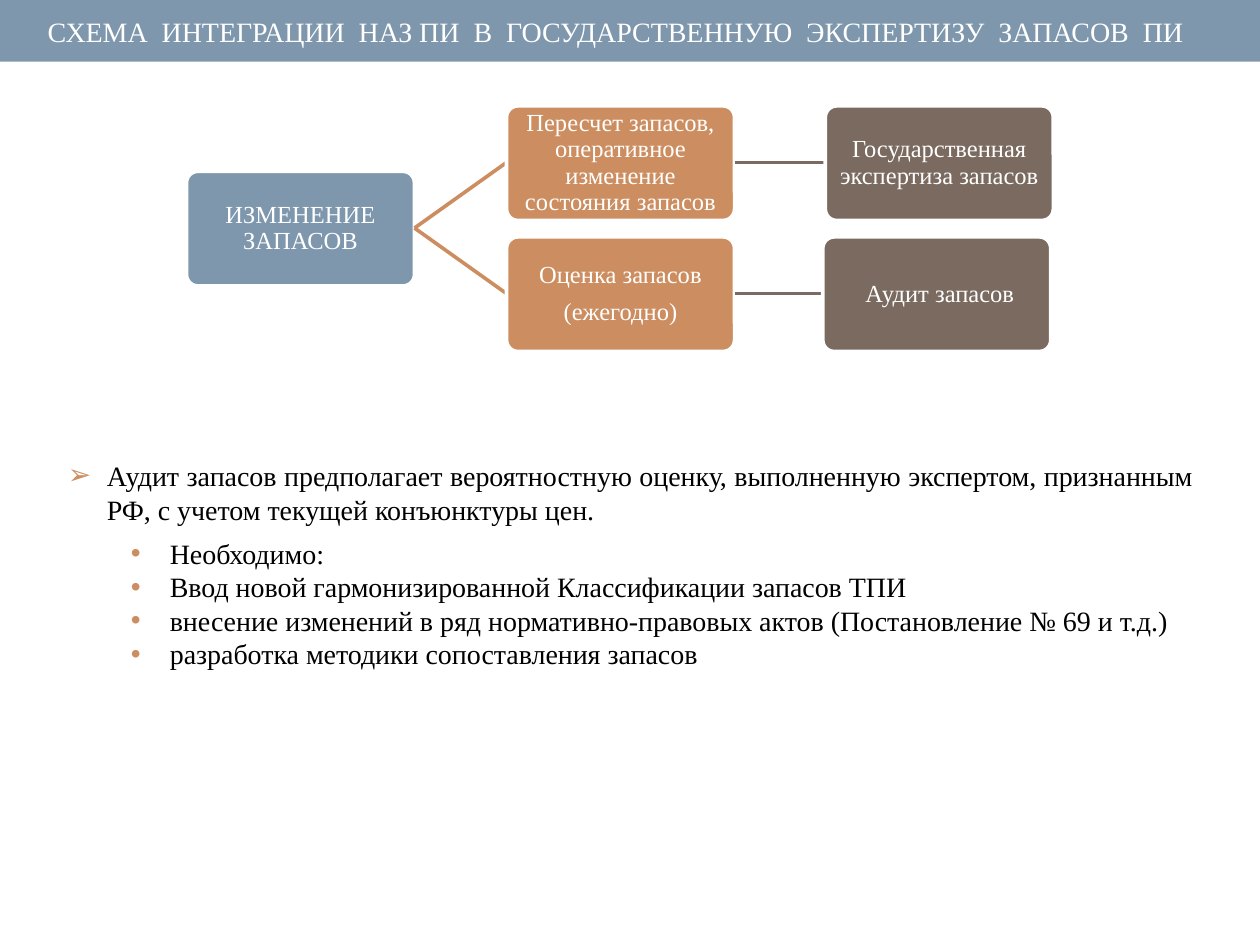
from lxml import etree
from pptx import Presentation
from pptx import util as u
from pptx.dml.color import RGBColor
from pptx.enum import shapes, text
from pptx.oxml import ns

PX = 9144  # 100 px to the inch
FONT = "Times New Roman"
WHITE = RGBColor(0xFF, 0xFF, 0xFF)
BLACK = RGBColor(0, 0, 0)
BLUE = RGBColor(0x7E, 0x97, 0xAD)
SAND = RGBColor(0xCC, 0x8E, 0x60)
BROWN = RGBColor(0x7A, 0x6A, 0x60)

TITLE = "СХЕМА  ИНТЕГРАЦИИ  НАЗ ПИ  В  ГОСУДАРСТВЕННУЮ  ЭКСПЕРТИЗУ  ЗАПАСОВ  ПИ"
ROOT = ["ИЗМЕНЕНИЕ ЗАПАСОВ"]
# middle box, end box, left edge of the end box
ROWS = [
    (["Пересчет запасов, оперативное изменение состояния запасов"],
     ["Государственная экспертиза запасов"], 507),
    (["Оценка запасов", "(ежегодно)"], [" Аудит запасов"], 505),
]
LEAD = ("Аудит запасов предполагает вероятностную оценку, выполненную "
        "экспертом, признанным РФ, с учетом текущей конъюнктуры цен.")
NEEDS = [
    "Необходимо:",
    "Ввод новой гармонизированной Классификации запасов ТПИ",
    "внесение изменений в ряд нормативно-правовых актов (Постановление № 69 и т.д.)",
    "разработка методики сопоставления запасов",
]


def px(*vals):
    return [u.Emu(v * PX) for v in vals]


def write(frame, lines, size, color, align):
    """Fill a text frame, one paragraph a line, and return the paragraphs."""
    frame.word_wrap = True
    for i, line in enumerate(lines):
        par = frame.paragraphs[0] if i == 0 else frame.add_paragraph()
        par.text = line
        par.alignment = align
        par.font.name = FONT
        par.font.size = u.Pt(size)
        par.font.color.rgb = color
    return frame.paragraphs


def block(slide, kind, box, fill):
    shape = slide.shapes.add_shape(kind, *px(*box))
    shape.shadow.inherit = False
    shape.fill.solid()
    shape.fill.fore_color.rgb = fill
    shape.line.fill.background()
    return shape


def node(slide, box, lines, fill):
    shape = block(slide, shapes.MSO_SHAPE.ROUNDED_RECTANGLE, box, fill)
    shape.adjustments[0] = 0.1
    shape.line.color.rgb = WHITE
    shape.line.width = u.Pt(2.08)
    frame = shape.text_frame
    frame.vertical_anchor = text.MSO_ANCHOR.MIDDLE
    frame.margin_left = frame.margin_right = PX
    frame.margin_top = frame.margin_bottom = PX
    for par in write(frame, lines, 14, WHITE, text.PP_ALIGN.CENTER):
        par.line_spacing = 0.9
        par.space_after = u.Pt(6)


def link(slide, start, end, color):
    line = slide.shapes.add_connector(
        shapes.MSO_CONNECTOR.STRAIGHT, *px(*start, *end))
    line.line.color.rgb = color
    line.line.width = u.Pt(2.08)
    etree.SubElement(line._element.spPr, ns.qn("a:effectLst"))


def header(slide, x, y, w, h):
    block(slide, shapes.MSO_SHAPE.RECTANGLE, (x, y, w, h), BLUE)
    box = slide.shapes.add_textbox(*px(x + 28, y - 1, w - 78, h + 2))
    box.text_frame.vertical_anchor = text.MSO_ANCHOR.MIDDLE
    write(box.text_frame, [TITLE], 16, WHITE, text.PP_ALIGN.LEFT)


def tree(slide, x, y):
    w, h, step, mid = 181, 91, 104, 254
    top = y + step // 2
    node(slide, (x, top, w, h), ROOT, BLUE)
    fork = (x + w, top + h // 2)
    for i, (near, far, end) in enumerate(ROWS):
        row = y + i * step
        axis = row + h // 2
        link(slide, fork, (x + mid, axis), SAND)
        node(slide, (x + mid, row, w, h), near, SAND)
        link(slide, (x + mid + w, axis), (x + end, axis), BROWN)
        node(slide, (x + end, row, w, h), far, BROWN)


def bullet(par, mark, indent):
    props = par._p.get_or_add_pPr()
    props.set("marL", str(indent * PX))
    props.set("indent", str(-31 * PX))
    color = etree.SubElement(props, ns.qn("a:buClr"))
    etree.SubElement(color, ns.qn("a:srgbClr"), val=str(SAND))
    etree.SubElement(props, ns.qn("a:buFont"), typeface="Arial")
    sign = etree.SubElement(props, ns.qn("a:buChar"), char=mark)
    # the default run font must come after the bullet
    font = props.find(ns.qn("a:defRPr"))
    if font is not None:
        sign.addnext(font)


def notes(slide, x, y, w, h):
    box = slide.shapes.add_textbox(*px(x, y, w, h))
    frame = box.text_frame
    lead, *needs = write(frame, [LEAD] + NEEDS, 16, BLACK,
                         text.PP_ALIGN.JUSTIFY)
    frame.auto_size = text.MSO_AUTO_SIZE.SHAPE_TO_FIT_TEXT
    lead.space_before = lead.space_after = u.Pt(6)
    bullet(lead, "➢", 31)
    for par in needs:
        par.level = 1
        bullet(par, "•", 81)


def main():
    deck = Presentation()
    deck.slide_width, deck.slide_height = px(1000, 750)
    slide = deck.slides.add_slide(deck.slide_layouts[6])
    header(slide, 0, 0, 1000, 49)
    tree(slide, 148, 84)
    notes(slide, 44, 359, 913, 207)
    deck.save("out.pptx")


if __name__ == "__main__":
    main()
